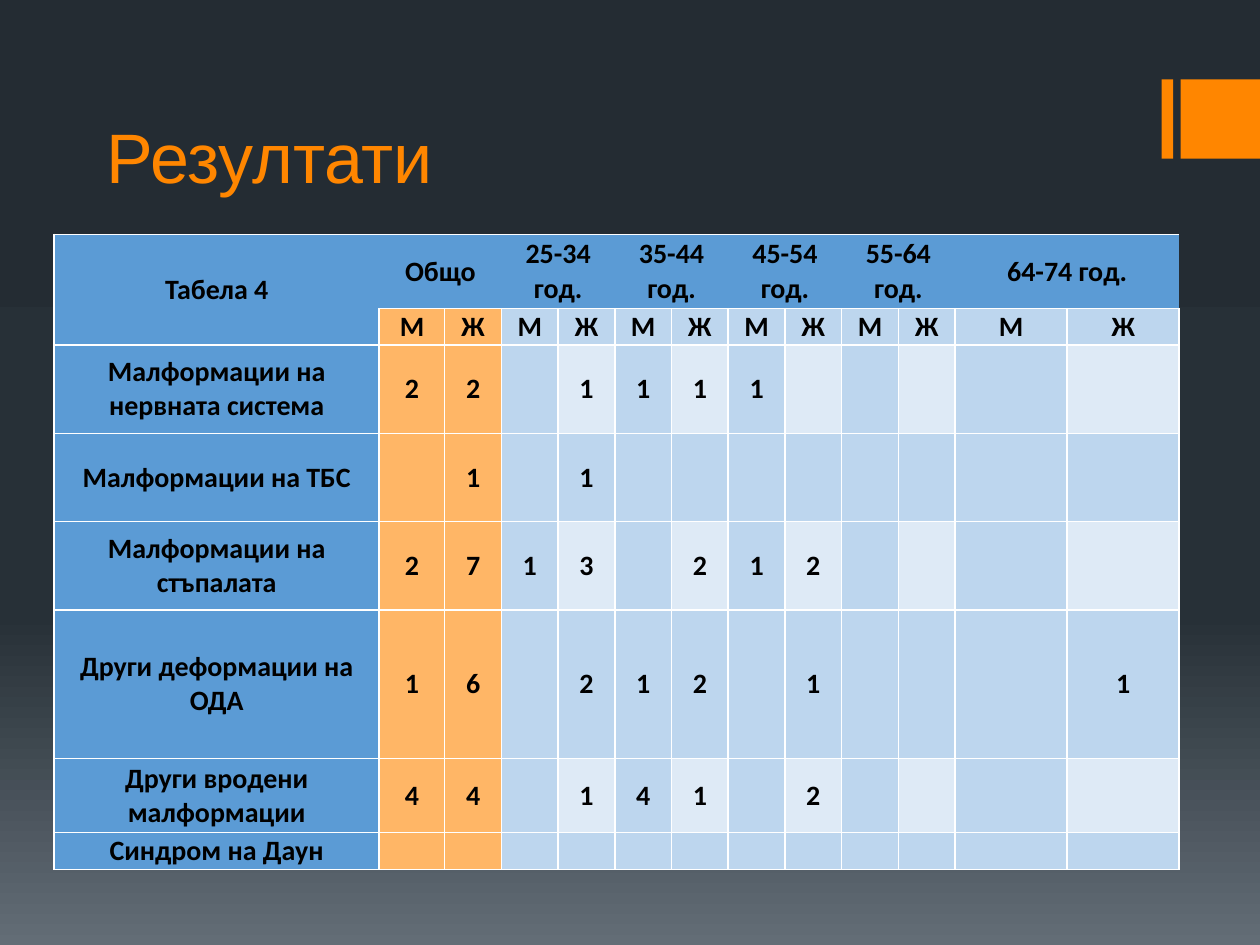
"""Build the results slide with a table of malformations by age group and sex."""
from copy import deepcopy
from dataclasses import dataclass

from lxml.etree import SubElement
from pptx import Presentation
from pptx.dml.color import RGBColor
from pptx.enum.shapes import MSO_SHAPE
from pptx.enum.text import MSO_ANCHOR, PP_ALIGN
from pptx.oxml.ns import qn
from pptx.util import Inches, Pt


@dataclass(frozen=True)
class Theme:
    backdrop: tuple = ((0, "242C33"), (0.65, "273037"), (1, "636D76"))
    accent: str = "FF8600"
    heading: str = "5B9BD5"
    total: str = "FFB666"
    band: str = "BDD6EE"
    light_band: str = "DEEAF6"
    ink: str = "000000"
    rule: str = "FFFFFF"
    title_font: str = "Arial"
    table_font: str = "Calibri"
    title_size: int = 40
    table_size: int = 16
    rule_width: int = 1


AGE_GROUPS = ["Общо", "25-34 год.", "35-44 год.", "45-54 год.", "55-64 год.", "64-74 год."]
SEXES = ["М", "Ж"]
CASES = {
    "Малформации на нервната система": {1: 2, 2: 2, 4: 1, 5: 1, 6: 1, 7: 1},
    "Малформации на ТБС": {2: 1, 4: 1},
    "Малформации на стъпалата": {1: 2, 2: 7, 3: 1, 4: 3, 6: 2, 7: 1, 8: 2},
    "Други деформации на ОДА": {1: 1, 2: 6, 4: 2, 5: 1, 6: 2, 8: 1, 12: 1},
    "Други вродени малформации": {1: 4, 2: 4, 4: 1, 5: 4, 6: 1, 8: 2},
    "Синдром на Даун": {},
}
COLUMN_WIDTHS = [2.58, 0.52] + [0.45] * 9 + [0.89] * 2
ROW_HEIGHTS = [0.59, 0.29, 0.7, 0.7, 0.7, 1.18, 0.59, 0.29]


def apply_format(target, values):
    for name, value in values.items():
        setattr(target, name, value)


class SlideBuilder:
    def __init__(self, slide, theme):
        self.slide = slide
        self.theme = theme

    def background(self):
        fill = self.slide.background.fill
        fill.gradient()
        fill.gradient_angle = 270
        stop_list = next(self.slide.element.iter(qn("a:gsLst")))
        stop_list.append(deepcopy(stop_list[-1]))
        for stop, (position, color) in zip(fill.gradient_stops, self.theme.backdrop):
            stop.position = position
            stop.color.rgb = RGBColor.from_string(color)

    def block(self, left, top, width, height):
        block = self.slide.shapes.add_shape(
            MSO_SHAPE.RECTANGLE, *map(Inches, (left, top, width, height)))
        block.shadow.inherit = False
        block.fill.solid()
        block.fill.fore_color.rgb = RGBColor.from_string(self.theme.accent)
        block.line.fill.background()

    def title(self, text, left, top, width, height):
        frame = self.slide.shapes.add_textbox(
            *map(Inches, (left, top, width, height))).text_frame
        apply_format(frame, {"word_wrap": True, "vertical_anchor": MSO_ANCHOR.BOTTOM, "text": text})
        font = frame.paragraphs[0].runs[0].font
        apply_format(font, {"name": self.theme.title_font, "size": Pt(self.theme.title_size)})
        font.color.rgb = RGBColor.from_string(self.theme.accent)

    def borders(self, cell, sides):
        properties = cell._tc.get_or_add_tcPr()
        for side in "LRTB":
            line = SubElement(properties, qn(f"a:ln{side}"), w=str(Pt(self.theme.rule_width)))
            if side in sides:
                SubElement(SubElement(line, qn("a:solidFill")), qn("a:srgbClr"), val=self.theme.rule)
            else:
                SubElement(line, qn("a:noFill"))

    def cell(self, cell, text, color, sides):
        self.borders(cell, sides)
        cell.fill.solid()
        cell.fill.fore_color.rgb = RGBColor.from_string(color)
        apply_format(cell, {
            "vertical_anchor": MSO_ANCHOR.MIDDLE,
            "margin_left": Inches(0.07), "margin_right": Inches(0.07),
            "margin_top": 0, "margin_bottom": 0,
        })
        paragraph = cell.text_frame.paragraphs[0]
        paragraph.alignment = PP_ALIGN.CENTER
        if not text:
            SubElement(paragraph._p, qn("a:endParaRPr"), sz=str(self.theme.table_size * 100))
            return
        run = paragraph.add_run()
        run.text = text
        apply_format(run.font, {
            "name": self.theme.table_font, "size": Pt(self.theme.table_size), "bold": True})
        run.font.color.rgb = RGBColor.from_string(self.theme.ink)

    def cell_color(self, row, column):
        if row == 0 or column == 0:
            return self.theme.heading
        if column <= len(SEXES):
            return self.theme.total
        if row > 1 and row % 2 == 0 and column % 2 == 0:
            return self.theme.light_band
        return self.theme.band

    def table(self, rows, left, top):
        table = self.slide.shapes.add_table(
            len(ROW_HEIGHTS), len(COLUMN_WIDTHS), Inches(left), Inches(top),
            Inches(sum(COLUMN_WIDTHS)), Inches(sum(ROW_HEIGHTS))).table
        apply_format(table, {"first_row": False, "horz_banding": False})
        for column, width in zip(table.columns, COLUMN_WIDTHS):
            column.width = Inches(width)
        for row, height in zip(table.rows, ROW_HEIGHTS):
            row.height = Inches(height)
        last = len(COLUMN_WIDTHS) - 1
        for row, texts in enumerate(rows):
            for column, text in enumerate(texts):
                sides = "LRTB"
                if row == 0:
                    sides = "TB" + {0: "L", last: "R"}.get(column, "")
                self.cell(table.cell(row, column), text, self.cell_color(row, column), sides)
        table.cell(0, 0).merge(table.cell(1, 0))
        for column in range(1, last, len(SEXES)):
            table.cell(0, column).merge(table.cell(0, column + 1))


def table_rows():
    groups = [text for group in AGE_GROUPS for text in (group, "")]
    rows = [["Табела 4"] + groups, [""] + SEXES * len(AGE_GROUPS)]
    for condition, counts in CASES.items():
        rows.append([condition] + [str(counts.get(i, "")) for i in range(1, len(COLUMN_WIDTHS))])
    return rows


def main():
    presentation = Presentation()
    apply_format(presentation, {"slide_width": Inches(10), "slide_height": Inches(7.5)})
    slide = presentation.slides.add_slide(presentation.slide_layouts[6])
    builder = SlideBuilder(slide, Theme())
    builder.background()
    builder.block(9.22, 0.63, 0.09, 0.63)
    builder.block(9.37, 0.63, 0.63, 0.63)
    builder.title("Резултати", 0.75, 0.6, 8, 1.02)
    builder.table(table_rows(), 0.43, 1.86)
    presentation.save("out.pptx")


if __name__ == "__main__":
    main()
